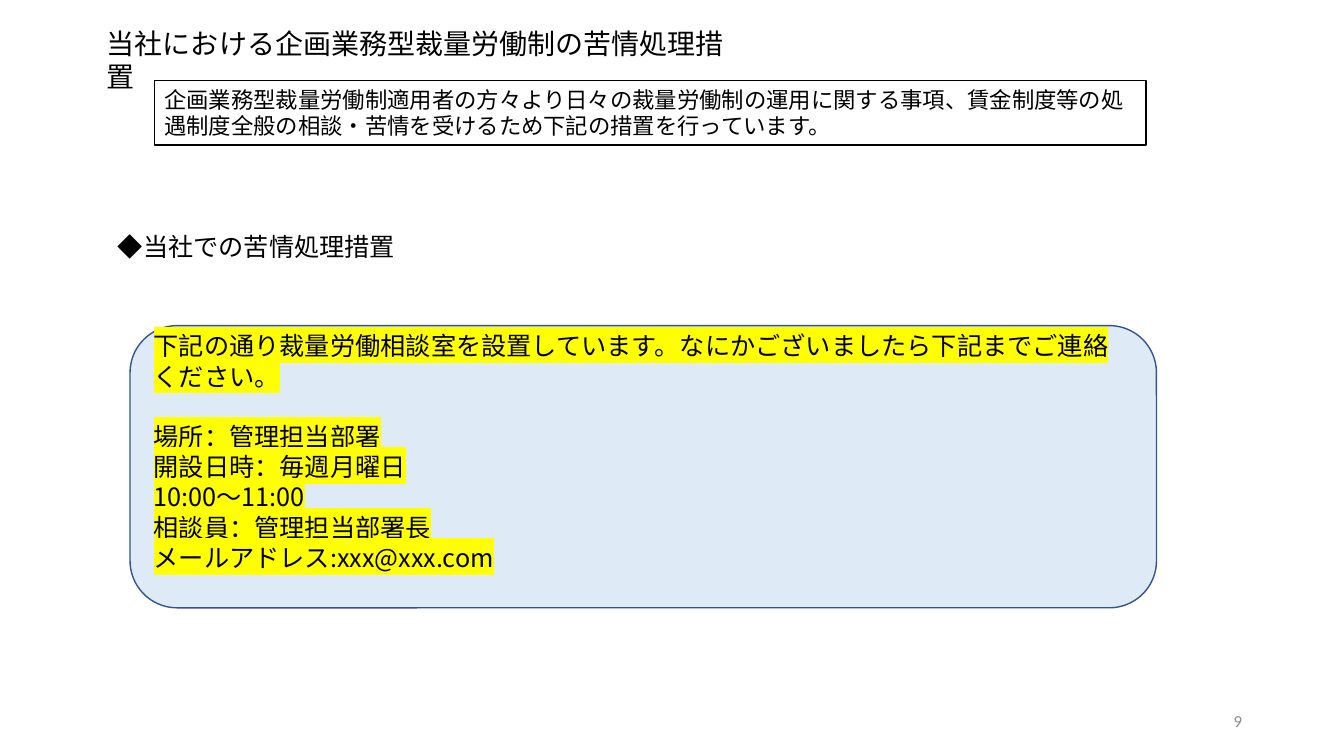
from dataclasses import dataclass

from lxml.etree import SubElement
from pptx import Presentation
from pptx.dml.color import RGBColor
from pptx.enum.shapes import MSO_SHAPE as Preset
from pptx.enum.text import MSO_ANCHOR as Anchor, MSO_AUTO_SIZE as AutoSize, PP_ALIGN as Align
from pptx.oxml.ns import qn
from pptx.util import Inches, Pt

SLIDE_WIDTH, SLIDE_HEIGHT = Inches(13.33), Inches(7.5)
JAPANESE_FONT = "Noto Sans CJK JP"
LINE_HEIGHT = 1.2
TITLE_ONLY_LAYOUT = 5


@dataclass(frozen=True)
class Area:
    """A place on the slide, in percent of the slide's width and height."""
    left: float
    top: float
    width: float
    height: float

    def place(self, shape) -> None:
        shape.left, shape.top, shape.width, shape.height = self.lengths()

    def lengths(self) -> tuple[int, int, int, int]:
        return (round(SLIDE_WIDTH * self.left / 100), round(SLIDE_HEIGHT * self.top / 100),
                round(SLIDE_WIDTH * self.width / 100), round(SLIDE_HEIGHT * self.height / 100))


@dataclass(frozen=True)
class TextStyle:
    size: float
    font: str = JAPANESE_FONT
    color: str = "000000"
    highlight: str | None = None
    align: Align = Align.LEFT
    anchor: Anchor = Anchor.TOP


@dataclass(frozen=True)
class Box:
    area: Area
    lines: list[str]
    style: TextStyle
    preset: Preset | None = None
    fill: str | None = None
    line: str | None = None


TITLE = Box(Area(7.2, 2.8, 49.05, 5.87),
            ["当社における企画業務型裁量労働制の苦情処理措置"], TextStyle(20))
INTRODUCTION = Box(
    Area(11.48, 10.67, 73.8, 8.53),
    ["企画業務型裁量労働制適用者の方々より日々の裁量労働制の運用に関する事項、"
     "賃金制度等の処遇制度全般の相談・苦情を受けるため下記の措置を行っています。"],
    TextStyle(16), Preset.RECTANGLE, line="000000")
HEADING = Box(Area(8.03, 30, 24, 5.33), ["◆当社での苦情処理措置"], TextStyle(18))
CONTACT = Box(
    Area(9.68, 43.07, 76.37, 37.33),
    ["下記の通り裁量労働相談室を設置しています。なにかございましたら下記までご連絡ください。",
     "場所：管理担当部署",
     "開設日時：毎週月曜日",
     "10:00～11:00",
     "相談員：管理担当部署長",
     "メールアドレス:xxx@xxx.com"],
    TextStyle(18, highlight="FFFF00", anchor=Anchor.MIDDLE),
    Preset.ROUNDED_RECTANGLE, "DEEBF7", "325491")
PAGE_NUMBER = Box(Area(70.67, 92.67, 22.5, 5.33), ["9"],
                  TextStyle(12, "Calibri", "8C8C8C", align=Align.RIGHT, anchor=Anchor.MIDDLE))


def rgb(color: str) -> RGBColor:
    return RGBColor.from_string(color)


def format_run(run, style: TextStyle) -> None:
    run.font.size = Pt(style.size)
    run.font.color.rgb = rgb(style.color)
    run.font.name = style.font
    properties = run.font._element
    if style.highlight:
        highlight = SubElement(properties, qn("a:highlight"))
        SubElement(highlight, qn("a:srgbClr"), val=style.highlight)
        properties.find(qn("a:solidFill")).addnext(highlight)
    east_asian = SubElement(properties, qn("a:ea"), typeface=style.font)
    properties.find(qn("a:latin")).addnext(east_asian)


def write_text(shape, box: Box) -> None:
    style, frame = box.style, shape.text_frame
    frame.text = "\n".join(box.lines)
    frame.word_wrap = True
    frame.auto_size = AutoSize.NONE
    frame.vertical_anchor = style.anchor
    for paragraph in frame.paragraphs:
        paragraph.alignment = style.align
        paragraph.line_spacing = Pt(style.size * LINE_HEIGHT)
        for run in paragraph.runs:
            format_run(run, style)


def add_box(slide, box: Box):
    if box.preset is None:
        shape = slide.shapes.add_textbox(*box.area.lengths())
    else:
        shape = slide.shapes.add_shape(box.preset, *box.area.lengths())
        shape.shadow.inherit = False
        shape.line.color.rgb = rgb(box.line)
        shape.line.width = Pt(1)
        if box.fill:
            shape.fill.solid()
            shape.fill.fore_color.rgb = rgb(box.fill)
        else:
            shape.fill.background()
    write_text(shape, box)
    return shape


def main() -> None:
    presentation = Presentation()
    presentation.slide_width, presentation.slide_height = SLIDE_WIDTH, SLIDE_HEIGHT
    slide = presentation.slides.add_slide(presentation.slide_layouts[TITLE_ONLY_LAYOUT])

    TITLE.area.place(slide.shapes.title)
    write_text(slide.shapes.title, TITLE)
    for box in (INTRODUCTION, HEADING, PAGE_NUMBER):
        add_box(slide, box)

    contact_frame = add_box(slide, CONTACT).text_frame
    contact_frame.paragraphs[0].space_after = Pt(CONTACT.style.size * LINE_HEIGHT)
    contact_frame.margin_bottom = Inches(0.35)

    presentation.save("out.pptx")


if __name__ == "__main__":
    main()
